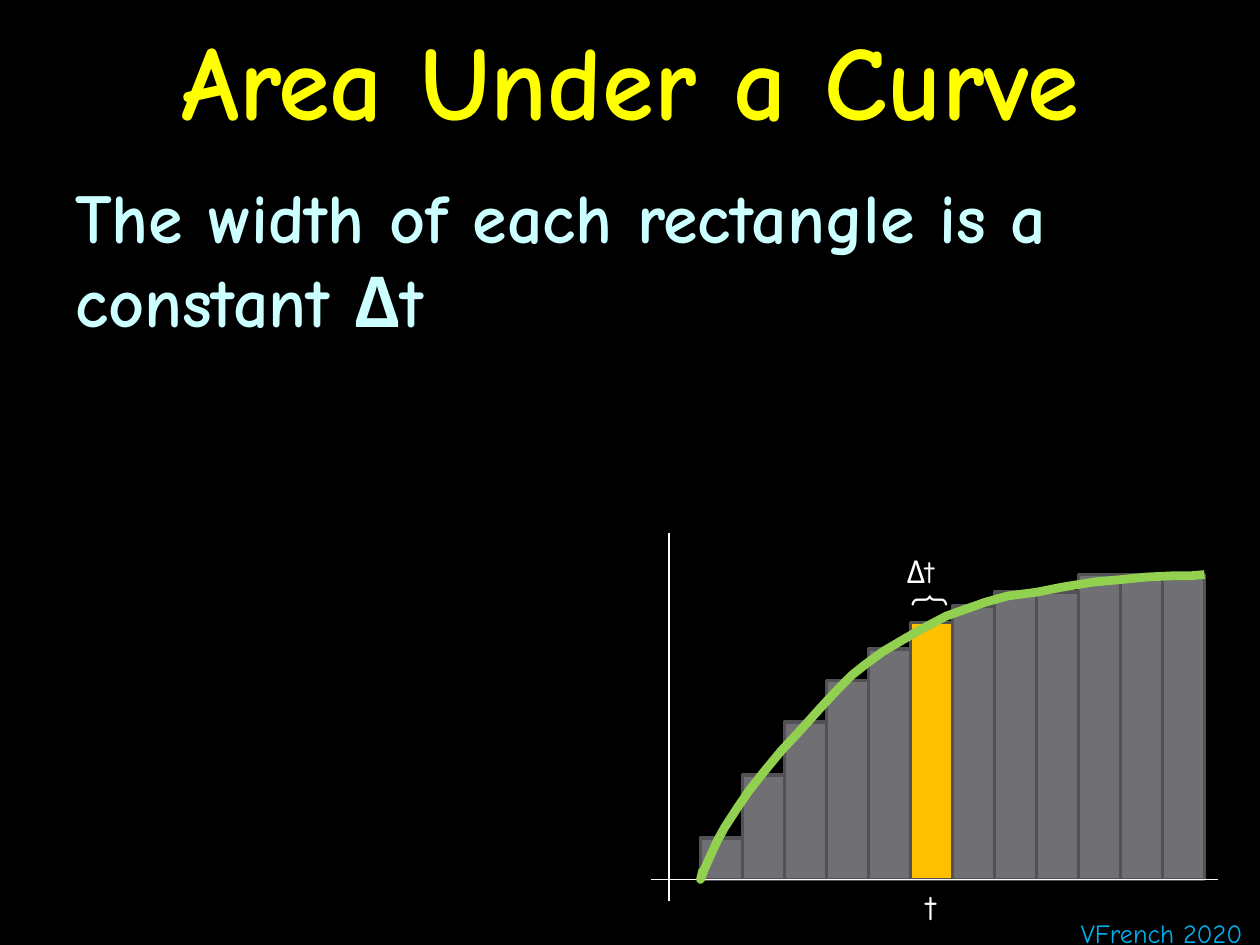
from lxml import etree
from pptx import Presentation, util as u
from pptx.dml.color import RGBColor
from pptx.enum import shapes, text
from pptx.oxml.ns import qn

COLORS = {
    "background": "000000",
    "title": "FFFF00",
    "body": "CCFFFF",
    "label": "FFFFFF",
    "credit": "00B0F0",
    "bar": "6F6F74",
    "highlight": "FFC000",
    "outline": "525256",
    "axis": "F9F9F9",
    "curve": "92D050",
}
COLUMNS, ROWS = 100, 75
BASELINE = 69.8
FIRST_BAR, LAST_BAR = 55.6, 95.6
BAR_TOPS = [66.5, 61.5, 57.3, 54, 51.5, 49.4, 48.1, 47, 47, 45.6, 45.6, 45.6]
HIGHLIGHTED_BAR = 5
CURVE_POINTS = [
    (95.6, 45.6), (94.5, 45.7), (93.1, 45.7), (91, 45.8), (89, 46),
    (86.8, 46.2), (84.3, 46.6), (82.3, 47), (80, 47.3), (78.2, 47.8),
    (76.5, 48.4), (75.1, 48.9), (73.2, 49.9), (71.8, 50.7), (70.1, 51.7),
    (68.6, 52.8), (67.6, 53.6), (66.6, 54.6), (65.2, 56.1), (63.4, 58.1),
    (62, 59.6), (60.6, 61.3), (59.5, 62.7), (58.6, 64), (57.5, 65.7),
    (56.9, 66.8), (56.4, 67.9), (55.95, 68.9), (55.6, 69.8), (55.8, 69),
]


class SlideBuilder:
    font = "Comic Neue"

    def __init__(self, presentation):
        self.column = presentation.slide_width / COLUMNS
        self.row = presentation.slide_height / ROWS
        self.slide = presentation.slides.add_slide(presentation.slide_layouts[6])
        self.paint(self.slide.background.fill, "background")

    def paint(self, fill, color):
        fill.solid()
        fill.fore_color.rgb = RGBColor.from_string(COLORS[color])

    def place(self, x, y):
        return round(x * self.column), round(y * self.row)

    def outline(self, shape, color, width):
        self.paint(shape.line.fill, color)
        shape.line.width = u.Pt(width)

    def text(self, wording, left, top, width, height, size, color, bold=False,
             align=text.PP_ALIGN.LEFT, anchor=text.MSO_ANCHOR.TOP,
             wrap=True, rotation=0):
        box = self.slide.shapes.add_textbox(
            *self.place(left, top), *self.place(width, height))
        box.rotation = rotation
        frame = box.text_frame
        frame.word_wrap = wrap
        frame.vertical_anchor = anchor
        paragraph = frame.paragraphs[0]
        paragraph.alignment = align
        run = paragraph.add_run()
        run.text = wording
        run.font.name = self.font
        run.font.size = u.Pt(size)
        run.font.bold = bold
        run.font.color.rgb = RGBColor.from_string(COLORS[color])

    def bar(self, left, top, width, color):
        shape = self.slide.shapes.add_shape(
            shapes.MSO_SHAPE.RECTANGLE,
            *self.place(left, top), *self.place(width, BASELINE - top))
        shape.shadow.inherit = False
        self.paint(shape.fill, color)
        self.outline(shape, "outline", 2)

    def axis(self, start, end):
        connector = self.slide.shapes.add_connector(
            shapes.MSO_CONNECTOR.STRAIGHT, *self.place(*start), *self.place(*end))
        self.outline(connector, "axis", 0.75)
        etree.SubElement(connector._element.spPr, qn("a:effectLst"))

    def curve(self, points):
        start, *rest = [self.place(*point) for point in points]
        builder = self.slide.shapes.build_freeform(*start)
        builder.add_line_segments(rest, close=False)
        shape = builder.convert_to_shape()
        shape.shadow.inherit = False
        shape.fill.background()
        self.outline(shape, "curve", 5)


def main():
    presentation = Presentation()
    presentation.slide_width = u.Inches(10)
    presentation.slide_height = u.Inches(7.5)
    builder = SlideBuilder(presentation)

    builder.text("Area Under a Curve", 0, 0, 100, 12.5, 60, "title", bold=True,
                 align=text.PP_ALIGN.CENTER, anchor=text.MSO_ANCHOR.MIDDLE)
    builder.text("The width of each rectangle is a constant Δt",
                 5, 13.3, 90, 61.7, 40, "body", bold=True)

    bar_width = (LAST_BAR - FIRST_BAR) / len(BAR_TOPS)
    for index, top in enumerate(BAR_TOPS):
        color = "highlight" if index == HIGHLIGHTED_BAR else "bar"
        builder.bar(FIRST_BAR + index * bar_width, top, bar_width, color)

    builder.axis((53.1, 42.3), (53.1, 71.5))
    builder.axis((96.7, BASELINE), (51.7, BASELINE))
    builder.curve(CURVE_POINTS)

    builder.text("t", 72.5, 69.8, 4.2, 4.4, 20, "label")
    builder.text("{", 72.3, 45.4, 3.3, 4.7, 22, "label", rotation=90)
    builder.text("Δt", 71, 43.3, 5.7, 4, 18, "label")
    builder.text("VFrench 2020", 84.8, 72.3, 16.3, 3.5, 15, "credit", wrap=False)

    presentation.save("out.pptx")


if __name__ == "__main__":
    main()
